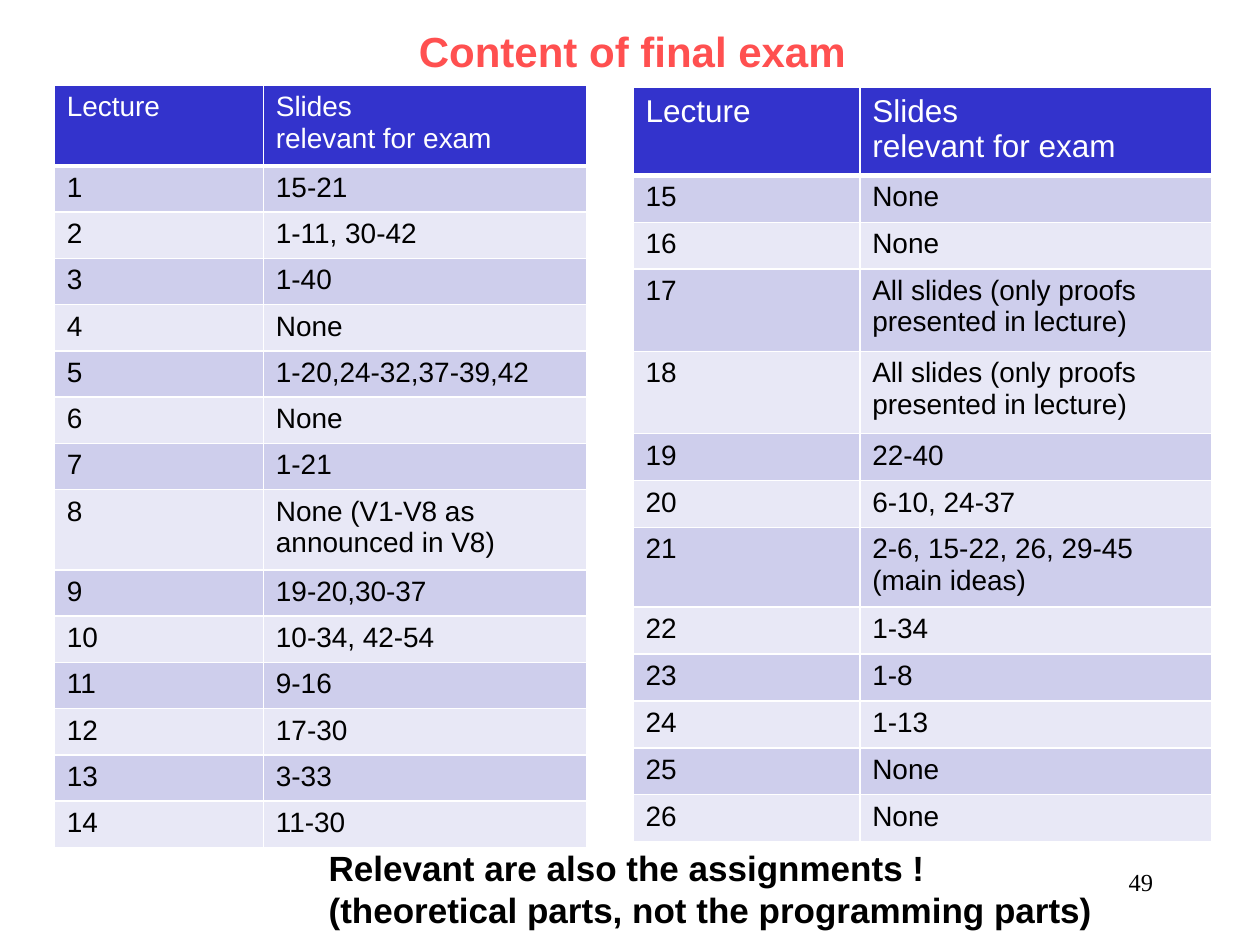
from lxml import etree
from pptx import Presentation
from pptx.dml.color import RGBColor
from pptx.enum import text
from pptx.oxml.ns import qn
from pptx.util import Pt

BLACK = RGBColor(0, 0, 0)
WHITE = RGBColor(255, 255, 255)
CORAL = RGBColor(0xFF, 0x50, 0x50)
BLUE = RGBColor(0x33, 0x33, 0xCC)
BANDS = RGBColor(0xCE, 0xCE, 0xEC), RGBColor(0xE8, 0xE8, 0xF6)

# Content: the lectures of each table are numbered from "first"
HEADER = ("Lecture", "Slides\nrelevant for exam")
PROOFS = "All slides (only proofs presented in lecture)"
TABLES = [
    dict(
        first=1, left=31, top=48.8, columns=(119.5, 185), header_size=16,
        header_height=46, row_height=26.4,
        heights={8: 46, 12: 25.4, 13: 25.4, 14: 25.4},
        slides=["15-21", "1-11, 30-42", "1-40", "None", "1-20,24-32,37-39,42",
                "None", "1-21", "None (V1-V8 as announced in V8)",
                "19-20,30-37", "10-34, 42-54", "9-16", "17-30", "3-33",
                "11-30"],
    ),
    dict(
        first=15, left=361.7, top=49.8, columns=(129.6, 201.2), header_size=18,
        header_height=49.4, row_height=26.8,
        heights={17: 47, 18: 47, 21: 42.8},
        slides=["None", "None", PROOFS, PROOFS, "22-40", "6-10, 24-37",
                "2-6, 15-22, 26, 29-45 (main ideas)", "1-34", "1-8", "1-13",
                "None", "None"],
    ),
]
TITLE = "Content of final exam"
REMARK = ("Relevant are also the assignments !\n"
          "(theoretical parts, not the programming parts)")
PAGE_NUMBER = "49"


def style(frame, size, color, font="Arial", bold=False, align=None):
    for paragraph in frame.paragraphs:
        paragraph.font.size = Pt(size)
        paragraph.font.name = font
        paragraph.font.bold = bold
        paragraph.font.color.rgb = color
        paragraph.alignment = align


def add_text(slide, box, words, size, color, wrap=True, **options):
    frame = slide.shapes.add_textbox(*map(Pt, box)).text_frame
    frame.word_wrap = wrap
    frame.text = words
    style(frame, size, color, **options)
    return frame


def set_borders(cell, bottom, top):
    properties = cell._tc.get_or_add_tcPr()
    widths = {"a:lnL": 1, "a:lnR": 1, "a:lnT": top, "a:lnB": bottom}
    for position, (tag, width) in enumerate(widths.items()):
        line = etree.Element(qn(tag), w=str(Pt(width)))
        fill = etree.SubElement(line, qn("a:solidFill"))
        etree.SubElement(fill, qn("a:srgbClr"), val=str(WHITE))
        properties.insert(position, line)


def add_lectures(slide, plan):
    first, slides = plan["first"], plan["slides"]
    rows = [HEADER] + [(str(n), s) for n, s in enumerate(slides, first)]
    heights = [plan["header_height"]] + [
        plan["heights"].get(first + i, plan["row_height"])
        for i in range(len(slides))]
    table = slide.shapes.add_table(
        len(rows), 2, Pt(plan["left"]), Pt(plan["top"]),
        Pt(sum(plan["columns"])), Pt(sum(heights))).table
    for column, width in zip(table.columns, plan["columns"]):
        column.width = Pt(width)
    for r, (row, height) in enumerate(zip(rows, heights)):
        table.rows[r].height = Pt(height)
        for c, words in enumerate(row):
            cell = table.cell(r, c)
            cell.text = words
            cell.fill.solid()
            cell.fill.fore_color.rgb = BANDS[(r - 1) % 2] if r else BLUE
            style(cell.text_frame, 16 if r else plan["header_size"],
                  BLACK if r else WHITE)
            # The rule below the header is thicker
            set_borders(cell, bottom=1 if r else 3, top=3 if r == 1 else 1)


def main():
    deck = Presentation()
    deck.slide_width, deck.slide_height = Pt(720), Pt(540)
    slide = deck.slides.add_slide(deck.slide_layouts[6])

    # Page number
    add_text(slide, (516, 492, 150, 36), PAGE_NUMBER, 14, BLACK,
             font="Times New Roman", align=text.PP_ALIGN.RIGHT)

    # Title
    title = add_text(slide, (19.4, 3.6, 684, 39.6), TITLE, 24, CORAL,
                     bold=True, align=text.PP_ALIGN.CENTER)
    title.vertical_anchor = text.MSO_ANCHOR.BOTTOM
    title.margin_top = title.margin_bottom = 0

    # Lecture tables
    for plan in TABLES:
        add_lectures(slide, plan)

    # Remark below the tables
    add_text(slide, (180.7, 480.2, 453.6, 55.4), REMARK, 20, BLACK,
             wrap=False, bold=True)

    deck.save("out.pptx")


if __name__ == "__main__":
    main()
